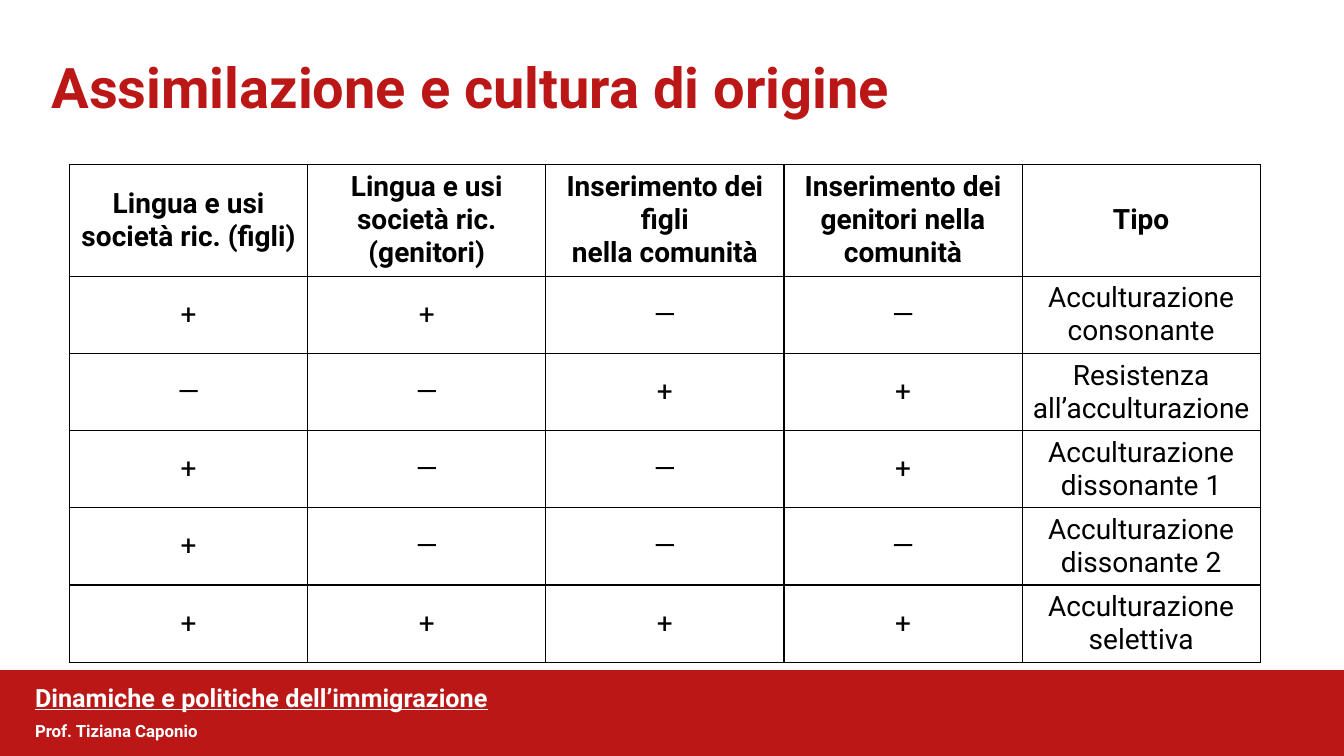
from lxml import etree
from pptx import Presentation
from pptx.dml.color import RGBColor
from pptx.enum.shapes import MSO_SHAPE
from pptx.enum.text import MSO_ANCHOR, MSO_AUTO_SIZE, PP_ALIGN
from pptx.oxml.ns import qn
from pptx.util import Inches, Pt

RECT = MSO_SHAPE.RECTANGLE
TOP, MIDDLE = MSO_ANCHOR.TOP, MSO_ANCHOR.MIDDLE
LEFT, CENTER = PP_ALIGN.LEFT, PP_ALIGN.CENTER
NO_FIT = MSO_AUTO_SIZE.NONE

# Content
TITLE = "Assimilazione e cultura di origine"
COURSE = "Dinamiche e politiche dell’immigrazione"
TEACHER = "Prof. Tiziana Caponio"
HEADER = [
    "Lingua e usi società ric. (figli)",
    "Lingua e usi società ric. (genitori)",
    "Inserimento dei figli\nnella comunità",
    "Inserimento dei genitori nella comunità",
    "Tipo",
]
TYPES = [
    ("++——", "Acculturazione consonante"),
    ("——++", "Resistenza all’acculturazione"),
    ("+——+", "Acculturazione dissonante 1"),
    ("+———", "Acculturazione dissonante 2"),
    ("++++", "Acculturazione selettiva"),
]

# Theme
RED, WHITE, BLACK = (RGBColor.from_string(c) for c in ("BB1717", "FFFFFF", "000000"))
THEME = {
    "title": {"size": Pt(40), "bold": True, "color": RED},
    "course": {"size": Pt(18), "bold": True, "underline": True, "color": WHITE},
    "teacher": {"size": Pt(12), "bold": True, "color": WHITE},
    "header": {"size": Pt(20), "bold": True, "color": BLACK},
    "body": {"size": Pt(20), "bold": False, "color": BLACK},
}
FONT = "Roboto"

# Layout in inches
WIDTH, HEIGHT = 13.33, 7.5
BAND_H = 0.85
TABLE = (0.69, 1.63, 11.81, 4.94)
HEADER_H = 1.11


def style(p, role, align):
    p.alignment = align
    for r in p.runs:
        r.font.name = FONT
        for name, value in THEME[role].items():
            if name == "color":
                r.font.color.rgb = value
            else:
                setattr(r.font, name, value)


def write(sp, text, role, spacing=1.0):
    tf = sp.text_frame
    tf.word_wrap, tf.auto_size, tf.vertical_anchor = True, NO_FIT, TOP
    tf.text = text
    p = tf.paragraphs[0]
    p.line_spacing = spacing
    style(p, role, LEFT)


def add_borders(cell):
    tc_pr = cell._tc.get_or_add_tcPr()
    for i, side in enumerate(("lnL", "lnR", "lnT", "lnB")):
        ln = etree.Element(qn("a:" + side), w=str(Pt(1)))
        fill = etree.SubElement(ln, qn("a:solidFill"))
        etree.SubElement(fill, qn("a:srgbClr"), val=str(BLACK))
        tc_pr.insert(i, ln)


prs = Presentation()
prs.slide_width, prs.slide_height = Inches(WIDTH), Inches(HEIGHT)
s = prs.slides.add_slide(prs.slide_layouts[5])

# Footer band
band = s.shapes.add_shape(RECT, 0, Inches(HEIGHT - BAND_H), Inches(WIDTH), Inches(BAND_H))
band.shadow.inherit = False
band.fill.solid()
band.fill.fore_color.rgb = RED
band.line.color.rgb = RED
band.line.width = Pt(1)

# Title
title = s.shapes.title
title.left, title.top, title.width, title.height = map(Inches, (0.41, 0.47, 12.5, 0.77))
write(title, TITLE, "title")

# Footer texts
for text, role, top in ((TEACHER, "teacher", 7.12), (COURSE, "course", 6.75)):
    box = s.shapes.add_textbox(*map(Inches, (0.25, top, 12.8, 0.37)))
    write(box, text, role, 0.9)

# Table of acculturation types
rows = [HEADER] + [[*marks, kind] for marks, kind in TYPES]
table = s.shapes.add_table(len(rows), len(HEADER), *map(Inches, TABLE)).table
table.first_row = table.horz_banding = False
for col in table.columns:
    col.width = Inches(TABLE[2] / len(HEADER))
for i, row in enumerate(table.rows):
    row.height = Inches((TABLE[3] - HEADER_H) / len(TYPES) if i else HEADER_H)
    for cell, text in zip(row.cells, rows[i]):
        cell.text = text
        cell.vertical_anchor = MIDDLE
        cell.fill.solid()
        cell.fill.fore_color.rgb = WHITE
        for p in cell.text_frame.paragraphs:
            style(p, "body" if i else "header", CENTER)
        add_borders(cell)

prs.save("out.pptx")
